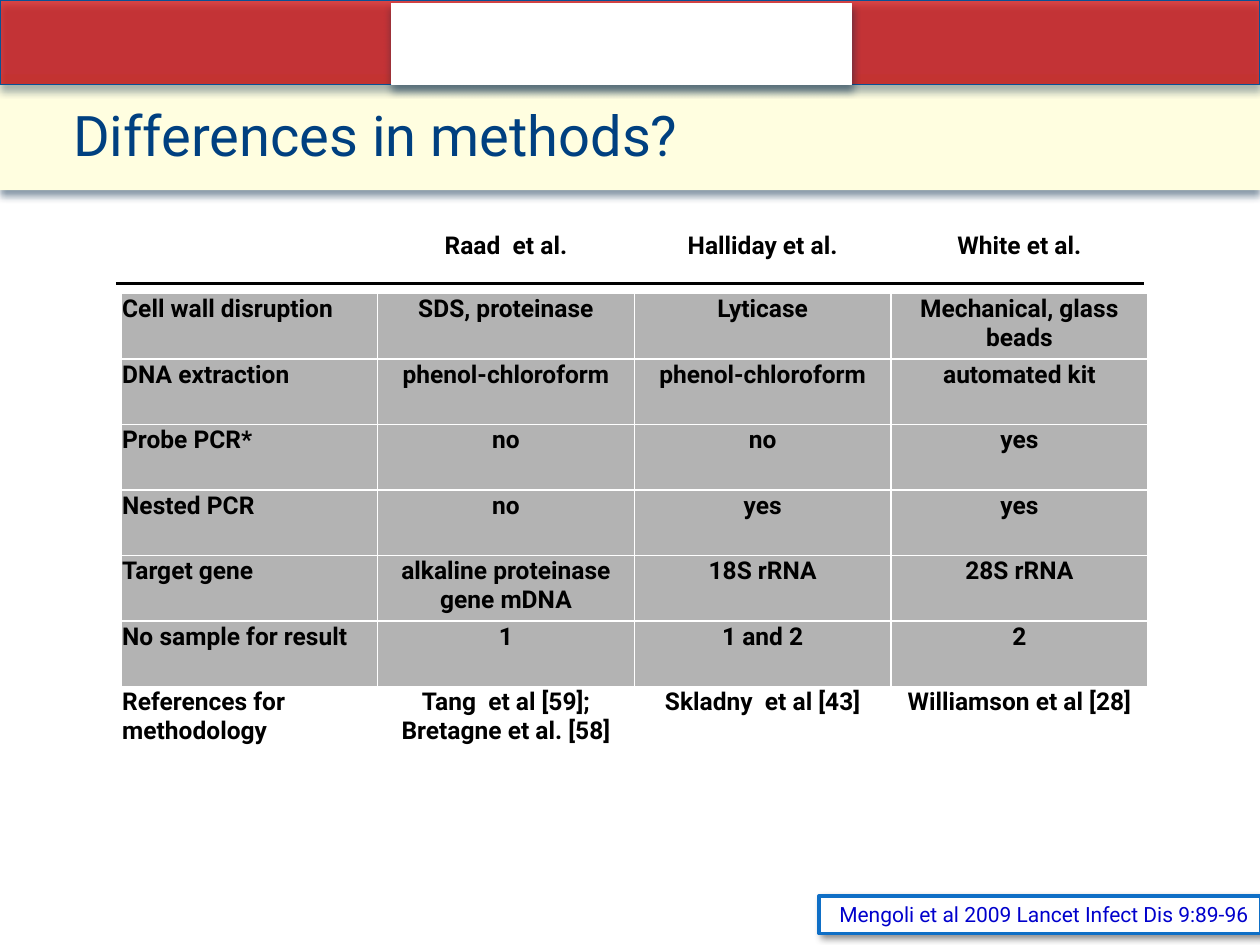
from dataclasses import dataclass
from typing import Optional

from lxml.etree import SubElement
from pptx import Presentation
from pptx.dml.color import RGBColor
from pptx.enum.shapes import MSO_CONNECTOR, MSO_SHAPE
from pptx.enum.text import MSO_ANCHOR, PP_ALIGN
from pptx.oxml.ns import qn
from pptx.util import Inches, Pt

FONT = "Roboto"
WHITE, GREY, BLACK = "FFFFFF", "B3B3B3", "000000"


@dataclass
class Shadow:
    color: str
    opacity: int
    blur: float
    distance: float
    angle: int


@dataclass
class Box:
    left: float
    top: float
    width: float
    height: float
    fill: str
    shadow: Shadow
    line: Optional[str] = None
    line_width: float = 0.75
    opacity: int = 100


BAND_SHADOW = Shadow("042747", 48, 4.5, 3, 90)
BANDS = [
    Box(0, 0.59, 10, 0.92, "FFFEE0", BAND_SHADOW),
    Box(0, 0, 10, 0.67, "CE0202", BAND_SHADOW, "095295", opacity=72),
    Box(3.11, 0.03, 3.65, 0.64, WHITE, BAND_SHADOW, WHITE),
]
CITATION_BOX = Box(6.5, 7.11, 3.51, 0.3, WHITE,
                   Shadow(BLACK, 43, 4, 3, 45), "0F6FC6", 2)

METHODS = [
    ["", "Raad  et al.", "Halliday et al.", "White et al."],
    ["Cell wall disruption", "SDS, proteinase", "Lyticase", "Mechanical, glass beads"],
    ["DNA extraction", "phenol-chloroform", "phenol-chloroform", "automated kit"],
    ["Probe PCR*", "no", "no", "yes"],
    ["Nested PCR", "no", "yes", "yes"],
    ["Target gene", "alkaline proteinase gene mDNA", "18S rRNA", "28S rRNA"],
    ["No sample for result", "1", "1 and 2", "2"],
    ["References for methodology", "Tang  et al [59]; Bretagne et al. [58]",
     "Skladny  et al [43]", "Williamson et al [28]"],
]


def rgb(color: str) -> RGBColor:
    return RGBColor.from_string(color)


def set_margins(target, left: float, top: float, right: float, bottom: float) -> None:
    target.margin_left, target.margin_top = Inches(left), Inches(top)
    target.margin_right, target.margin_bottom = Inches(right), Inches(bottom)


def add_text(paragraph, text: str, size: int, color: str, bold: bool = False,
             align=PP_ALIGN.LEFT) -> None:
    paragraph.alignment = align
    run = paragraph.add_run()
    run.text = text
    run.font.name, run.font.size, run.font.bold = FONT, Pt(size), bold
    run.font.color.rgb = rgb(color)


def add_alpha(color_element, percent: int) -> None:
    SubElement(color_element, qn("a:alpha"), val=str(percent * 1000))


def add_shadow(shape, shadow: Shadow) -> None:
    shape.shadow.inherit = False
    effects = shape._element.spPr.find(qn("a:effectLst"))
    outer = SubElement(effects, qn("a:outerShdw"), blurRad=str(Pt(shadow.blur)),
                       dist=str(Pt(shadow.distance)),
                       dir=str(shadow.angle * 60000), rotWithShape="0")
    add_alpha(SubElement(outer, qn("a:srgbClr"), val=shadow.color), shadow.opacity)


def add_box(slide, box: Box):
    shape = slide.shapes.add_shape(
        MSO_SHAPE.RECTANGLE, Inches(box.left), Inches(box.top),
        Inches(box.width), Inches(box.height))
    shape.fill.solid()
    shape.fill.fore_color.rgb = rgb(box.fill)
    if box.opacity < 100:
        solid_fill = shape._element.spPr.find(qn("a:solidFill"))
        add_alpha(solid_fill[0], box.opacity)
    if box.line:
        shape.line.color.rgb = rgb(box.line)
        shape.line.width = Pt(box.line_width)
    else:
        shape.line.fill.background()
    add_shadow(shape, box.shadow)
    return shape


def format_title(slide, text: str) -> None:
    title = slide.shapes.title
    title.left, title.top = Inches(0.58), Inches(0.75)
    title.width, title.height = Inches(8.83), Inches(0.59)
    frame = title.text_frame
    frame.vertical_anchor = MSO_ANCHOR.TOP
    set_margins(frame, 0, 0.05, 0, 0)
    add_text(frame.paragraphs[0], text, 32, "004080")
    # Keep the title in front of the bands
    slide.shapes._spTree.append(title._element)


def add_methods_table(slide) -> None:
    row_count, column_count = len(METHODS), len(METHODS[0])
    table = slide.shapes.add_table(
        row_count, column_count, Inches(0.96), Inches(1.83),
        Inches(8.15), Inches(4.16)).table
    table.first_row = table.horz_banding = False
    for row_index, values in enumerate(METHODS):
        table.rows[row_index].height = Inches(0.52 if row_index else 0.5)
        shaded = 0 < row_index < row_count - 1
        for column_index, value in enumerate(values):
            cell = table.cell(row_index, column_index)
            cell.fill.solid()
            cell.fill.fore_color.rgb = rgb(GREY if shaded else WHITE)
            set_margins(cell, 0.01, 0.01, 0.01, 0)
            if value:
                align = PP_ALIGN.CENTER if column_index else PP_ALIGN.LEFT
                add_text(cell.text_frame.paragraphs[0], value, 14, BLACK, True, align)


def add_header_rule(slide) -> None:
    rule = slide.shapes.add_connector(
        MSO_CONNECTOR.STRAIGHT, Inches(0.92), Inches(2.25), Inches(9.08), Inches(2.25))
    rule.line.color.rgb = rgb(BLACK)
    rule.line.width = Pt(2.25)
    SubElement(rule._element.spPr, qn("a:effectLst"))


def add_citation(slide, text: str) -> None:
    frame = add_box(slide, CITATION_BOX).text_frame
    frame.word_wrap = False
    frame.vertical_anchor = MSO_ANCHOR.TOP
    add_text(frame.paragraphs[0], text, 12, "0000CC", align=PP_ALIGN.RIGHT)


def main() -> None:
    presentation = Presentation()
    presentation.slide_width, presentation.slide_height = Inches(10), Inches(7.5)
    slide = presentation.slides.add_slide(presentation.slide_layouts[5])

    # Header bands and title
    for band in BANDS:
        add_box(slide, band)
    format_title(slide, "Differences in methods?")

    # Comparison of methods
    add_methods_table(slide)
    add_header_rule(slide)

    # Source
    add_citation(slide, "Mengoli et al 2009 Lancet Infect Dis 9:89-96")
    presentation.save("out.pptx")


if __name__ == "__main__":
    main()
